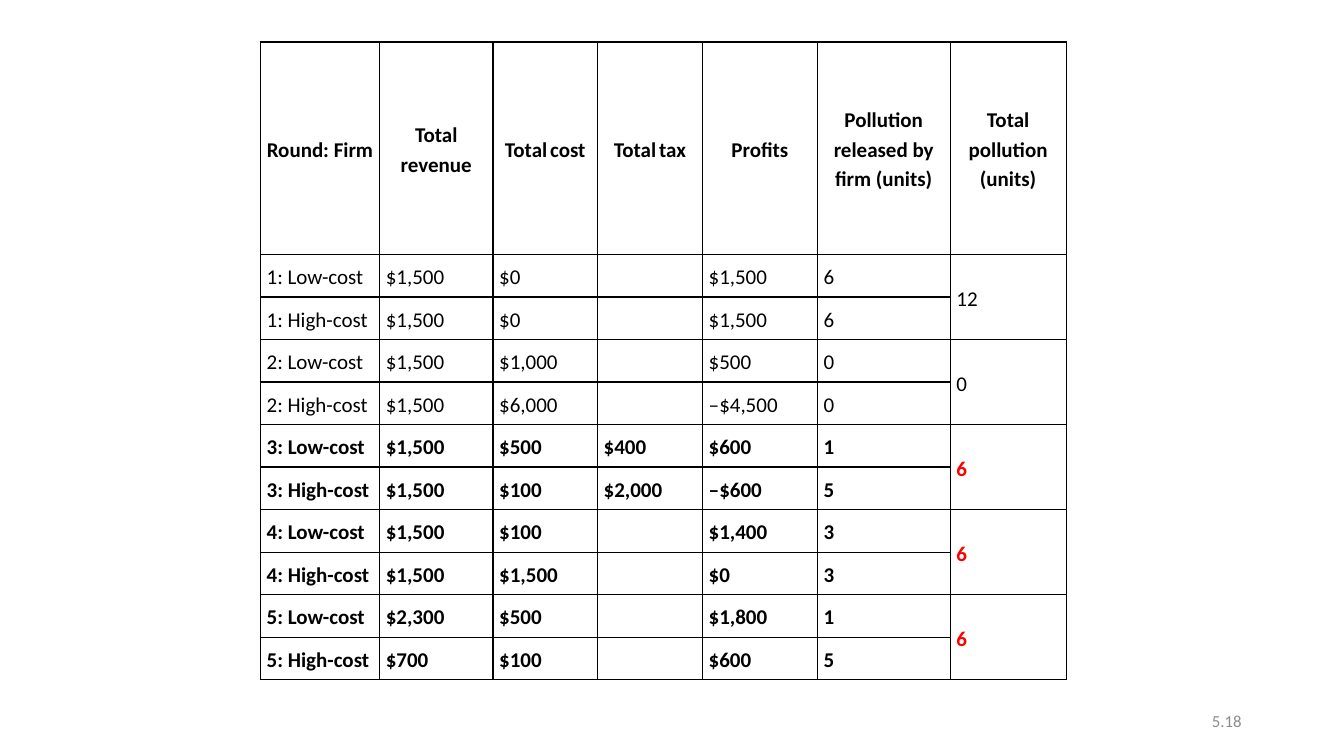
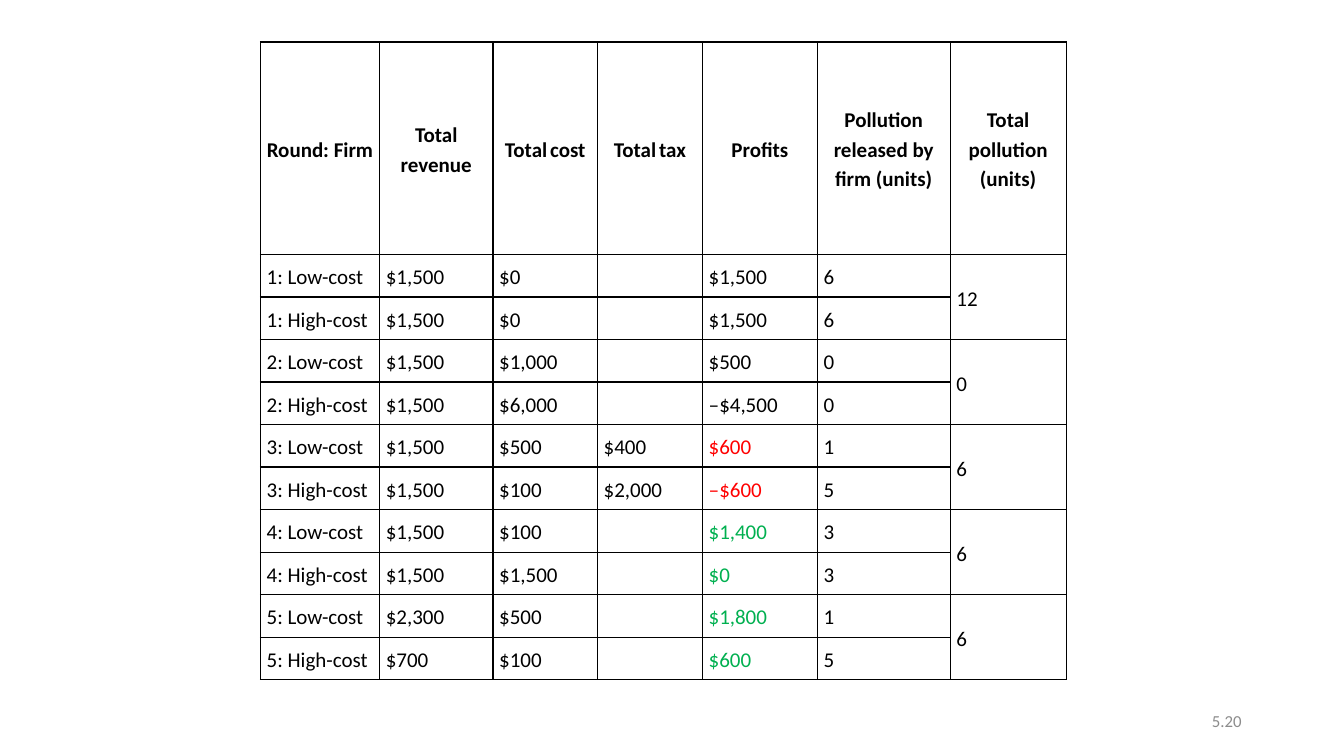
from lxml import etree
from pptx import Presentation, util as u
from pptx.dml.color import RGBColor
from pptx.enum import text
from pptx.oxml.ns import qn

# Shared style
FONT = "Calibri"
BLACK, RED, GREEN, GREY = "000000", "FF0000", "00B050", "8C8C8C"
BODY_PT, NUMBER_PT, GAP_PT = 15, 12, 9

# Table layout
LEFT, TOP = 496, 80
COL_WIDTHS = [227, 216, 199, 200, 219, 253, 221]
HEADER_H, ROW_H = 405, 81
PROFIT_COL, TOTAL_COL = 4, 6

# Table content
HEADERS = ["Round: Firm", "Total revenue", "Total cost", "Total tax", "Profits",
           "Pollution released by firm (units)", "Total pollution (units)"]
NARROW_GAP = {"Total revenue", "Total cost", "Total tax"}
ROWS = [
    ["1: Low-cost", "$1,500", "$0", "", "$1,500", "6", "12"],
    ["1: High-cost", "$1,500", "$0", "", "$1,500", "6", ""],
    ["2: Low-cost", "$1,500", "$1,000", "", "$500", "0", "0"],
    ["2: High-cost", "$1,500", "$6,000", "", "‒$4,500", "0", ""],
    ["3: Low-cost", "$1,500", "$500", "$400", "$600", "1", "6"],
    ["3: High-cost", "$1,500", "$100", "$2,000", "‒$600", "5", ""],
    ["4: Low-cost", "$1,500", "$100", "", "$1,400", "3", "6"],
    ["4: High-cost", "$1,500", "$1,500", "", "$0", "3", ""],
    ["5: Low-cost", "$2,300", "$500", "", "$1,800", "1", "6"],
    ["5: High-cost", "$700", "$100", "", "$600", "5", ""],
]

# Per slide: number, rounds in bold, text colours by (round, column)
SLIDES = [
    ("5.18", {3, 4, 5}, {(n, TOTAL_COL): RED for n in (3, 4, 5)}),
    ("5.20", set(), {(3, PROFIT_COL): RED, (4, PROFIT_COL): GREEN,
                     (5, PROFIT_COL): GREEN}),
]


def px(n):
    return u.Emu(n * 9525 // 2)


def rgb(value):
    return RGBColor.from_string(value)


def set_font(font, size, color, bold=False):
    font.name = FONT
    font.size = u.Pt(size)
    font.bold = bold
    font.color.rgb = rgb(color)


def add_borders(cell):
    tcPr = cell._tc.get_or_add_tcPr()
    for i, side in enumerate(("lnL", "lnR", "lnT", "lnB")):
        ln = etree.Element(qn(f"a:{side}"), w=str(u.Pt(1)))
        fill = etree.SubElement(ln, qn("a:solidFill"))
        etree.SubElement(fill, qn("a:srgbClr"), val=BLACK)
        tcPr.insert(i, ln)


def format_cell(cell):
    cell.fill.background()
    cell.margin_left = cell.margin_right = px(12)
    cell.margin_top = cell.margin_bottom = 0
    cell.vertical_anchor = text.MSO_ANCHOR.MIDDLE
    add_borders(cell)


def write_cell(cell, parts, color=BLACK, bold=False, align=text.PP_ALIGN.LEFT):
    p = cell.text_frame.paragraphs[0]
    p.alignment = align
    p.line_spacing = 1.15
    p.space_after = u.Pt(10)
    set_font(p.font, BODY_PT, color, bold)
    for part in parts:
        r = p.add_run()
        r.text = part
        if part == " ":
            r.font.size = u.Pt(GAP_PT)


def add_results_table(s, bold_rounds, colors):
    frame = s.shapes.add_table(len(ROWS) + 1, len(HEADERS), px(LEFT), px(TOP),
                               px(sum(COL_WIDTHS)), px(HEADER_H + ROW_H * len(ROWS)))
    table = frame.table
    table.first_row = table.horz_banding = False
    for col, width in zip(table.columns, COL_WIDTHS):
        col.width = px(width)
    for i, row in enumerate(table.rows):
        row.height = px(ROW_H if i else HEADER_H)
    for cell in table.iter_cells():
        format_cell(cell)

    # Header row
    for j, header in enumerate(HEADERS):
        parts = header.partition(" ") if header in NARROW_GAP else [header]
        write_cell(table.cell(0, j), parts, bold=True, align=text.PP_ALIGN.CENTER)

    # Two firms per round share one pollution total
    for i, values in enumerate(ROWS, 1):
        round_no = (i + 1) // 2
        if i % 2:
            table.cell(i, TOTAL_COL).merge(table.cell(i + 1, TOTAL_COL))
        for j, value in enumerate(values):
            if value:
                write_cell(table.cell(i, j), [value],
                           colors.get((round_no, j), BLACK), round_no in bold_rounds)


def add_slide_number(s, number):
    tf = s.shapes.add_textbox(px(1808), px(1334), px(576), px(77)).text_frame
    tf.word_wrap = True
    tf.vertical_anchor = text.MSO_ANCHOR.MIDDLE
    p = tf.paragraphs[0]
    p.text = number
    p.alignment = text.PP_ALIGN.RIGHT
    set_font(p.font, NUMBER_PT, GREY)


def main():
    prs = Presentation()
    prs.slide_width, prs.slide_height = px(2560), px(1440)
    for number, bold_rounds, colors in SLIDES:
        s = prs.slides.add_slide(prs.slide_layouts[6])
        add_results_table(s, bold_rounds, colors)
        add_slide_number(s, number)
    prs.save("out.pptx")


if __name__ == "__main__":
    main()
